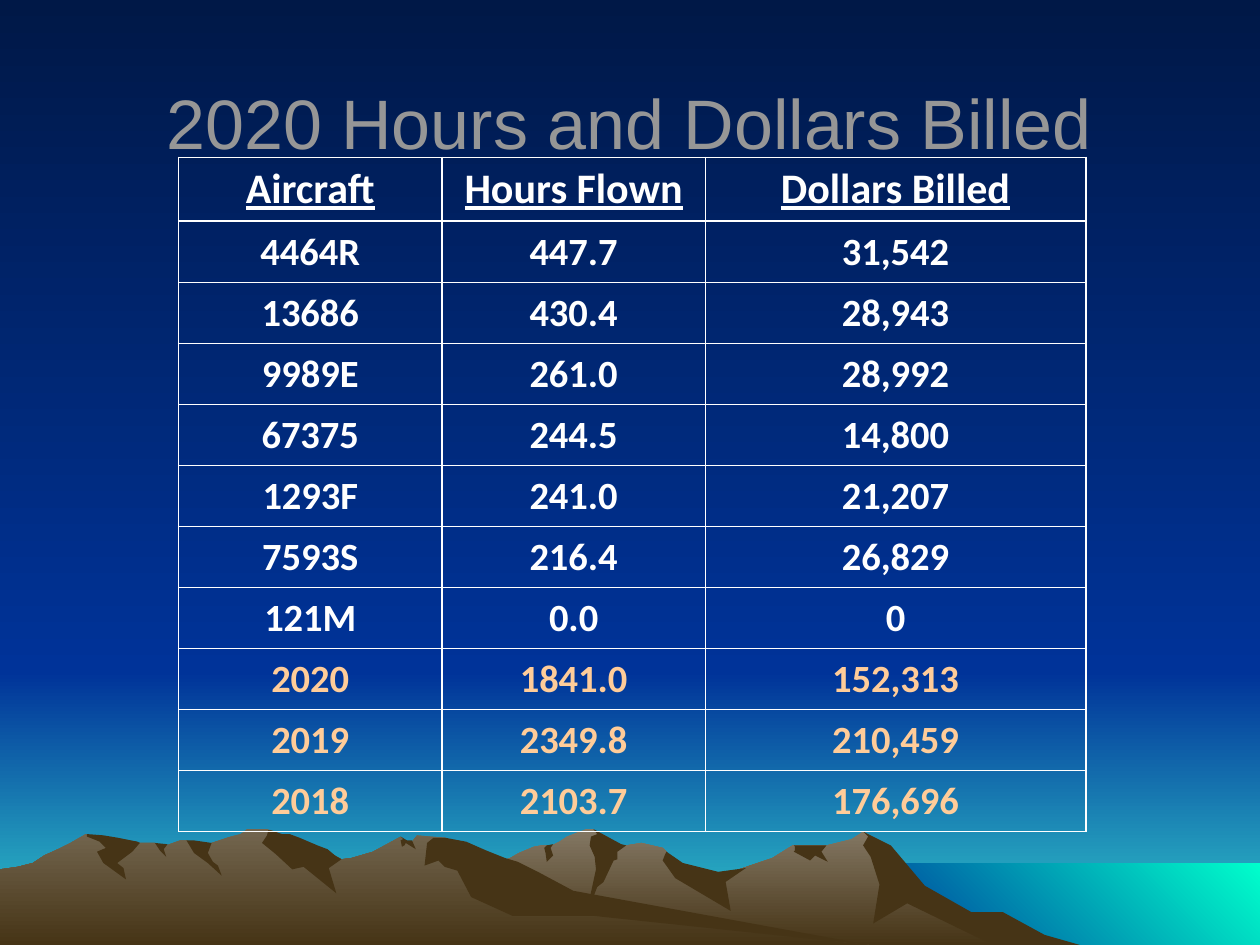
from dataclasses import dataclass

from lxml.etree import SubElement
from pptx import Presentation
from pptx.dml.color import RGBColor
from pptx.enum.text import MSO_ANCHOR, PP_ALIGN
from pptx.oxml.ns import qn
from pptx.util import Cm, Pt


@dataclass(frozen=True)
class Theme:
    heading_font: str = "Arial"
    table_font: str = "Calibri"
    title_size: int = 40
    header_size: int = 24
    body_size: int = 22
    title: str = "969696"
    text: str = "FFFFFF"
    total: str = "FFCC99"
    night: str = "001847"
    blue: str = "003399"
    horizon: str = "33CCCC"
    sea: str = "00FFCC"
    rock: str = "463416"
    far_rock: str = "847864"
    near_rock: str = "73664F"


THEME = Theme()
OUTLINE_UNIT = Cm(0.0254)  # outlines are in hundredths of an inch

TITLE = "2020 Hours and Dollars Billed"
HEADER = ("Aircraft", "Hours Flown", "Dollars Billed")
AIRCRAFT = [
    ("4464R", "447.7", "31,542"),
    ("13686", "430.4", "28,943"),
    ("9989E", "261.0", "28,992"),
    ("67375", "244.5", "14,800"),
    ("1293F", "241.0", "21,207"),
    ("7593S", "216.4", "26,829"),
    ("121M", "0.0", "0"),
]
YEARS = [
    ("2020", "1841.0", "152,313"),
    ("2019", "2349.8", "210,459"),
    ("2018", "2103.7", "176,696"),
]

FAR_RANGE = [
    (802, 740), (778, 727), (764, 723), (723, 698), (702, 671), (685, 660), (676, 666),
    (656, 671), (629, 671), (613, 681), (566, 697), (536, 690), (529, 676), (526, 673),
    (509, 669), (497, 671), (486, 673), (474, 661), (471, 658), (465, 658), (450, 664),
    (444, 668), (438, 671), (430, 671), (424, 672), (412, 677), (405, 681), (394, 685),
    (355, 698), (327, 709), (277, 739), (258, 750), (820, 750)]
FAR_SHADOWS = [
    [(796, 724), (771, 724), (734, 703), (707, 671), (685, 660), (689, 664), (685, 671),
     (691, 680), (698, 702), (693, 733), (720, 717), (788, 750), (857, 750), (829, 742)],
    [(471, 658), (474, 662), (469, 664), (468, 671), (472, 680), (473, 690), (465, 727),
     (474, 704), (479, 700), (487, 683), (490, 682), (490, 676), (497, 671), (493, 670)],
    [(529, 676), (528, 678), (526, 683), (536, 697), (580, 723), (576, 700), (592, 689),
     (570, 692), (542, 685)],
    [(650, 671), (630, 671), (631, 672), (631, 675), (630, 676), (643, 683), (647, 679),
     (657, 684), (652, 676), (656, 671)],
    [(433, 677), (432, 673), (434, 671), (439, 670), (437, 673), (439, 679), (434, 684)],
]
NEAR_RANGE = [
    (690, 750), (667, 748), (432, 712), (354, 665), (331, 663), (327, 668), (323, 668),
    (318, 664), (296, 676), (279, 681), (271, 682), (260, 676), (236, 681), (223, 663),
    (219, 660), (212, 658), (196, 658), (191, 662), (183, 664), (168, 669), (160, 671),
    (148, 667), (143, 667), (132, 671), (128, 671), (123, 669), (111, 669), (94, 671),
    (68, 662), (56, 669), (46, 674), (35, 679), (26, 685), (14, 688), (0, 690), (0, 750)]
NEAR_SHADOWS = [
    [(212, 663), (208, 669), (219, 678), (232, 690), (241, 688), (267, 709), (261, 689),
     (271, 682), (266, 679), (260, 674), (252, 671), (238, 665), (230, 662), (224, 662),
     (215, 659), (213, 659)],
    [(370, 668), (354, 665), (344, 665), (339, 669), (337, 687), (348, 683), (353, 688),
     (363, 691), (374, 712), (407, 727), (472, 727), (690, 750), (455, 707), (427, 692),
     (411, 684), (401, 681), (386, 675)],
    [(318, 667), (320, 666), (318, 664), (323, 667), (327, 667), (330, 674), (322, 669),
     (321, 671), (319, 672)],
    [(154, 667), (161, 668), (168, 669), (165, 677), (169, 684), (173, 687), (176, 695),
     (165, 685), (154, 677), (148, 667)],
    [(133, 670), (130, 674), (132, 680), (127, 675), (123, 669)],
    [(109, 668), (111, 669), (105, 676), (93, 685), (98, 689), (100, 698), (82, 685),
     (77, 676), (84, 673), (79, 668), (69, 664), (69, 662), (82, 663), (94, 665)],
]


def color(value):
    return RGBColor.from_string(value)


def set_gradient(fill, start, end, angle=270):
    fill.gradient()
    fill.gradient_angle = angle
    for stop, value in zip(fill.gradient_stops, (start, end)):
        stop.color.rgb = color(value)


def add_outline(slide, points, start, end=None, angle=270):
    """Add a closed shape with a plain fill, or a gradient when end is given."""
    builder = slide.shapes.build_freeform(*points[0], scale=OUTLINE_UNIT)
    builder.add_line_segments(points[1:], close=True)
    shape = builder.convert_to_shape()
    shape.shadow.inherit = False
    shape.line.fill.background()
    if end:
        set_gradient(shape.fill, start, end, angle)
    else:
        shape.fill.solid()
        shape.fill.fore_color.rgb = color(start)


def box(left, top, right, bottom):
    return [(left, top), (right, top), (right, bottom), (left, bottom)]


def add_landscape(slide):
    set_gradient(slide.background.fill, THEME.night, THEME.blue)
    # Sky, horizon and sea
    add_outline(slide, box(0, 533, 1000, 750), THEME.blue, THEME.horizon)
    add_outline(slide, box(0, 0, 1000, 533), THEME.night, THEME.blue)
    add_outline(slide, box(683, 685, 1000, 750), THEME.blue, THEME.sea, angle=45)
    # Mountain ranges with their shaded slopes
    for outline, top_color, shadows in (
        (FAR_RANGE, THEME.far_rock, FAR_SHADOWS),
        (NEAR_RANGE, THEME.near_rock, NEAR_SHADOWS),
    ):
        add_outline(slide, outline, top_color, THEME.rock)
        for shadow in shadows:
            add_outline(slide, shadow, THEME.rock)


def format_text(paragraph, font_name, size, value):
    paragraph.alignment = PP_ALIGN.CENTER
    font = paragraph.runs[0].font
    font.name = font_name
    font.size = Pt(size)
    font.color.rgb = color(value)
    return font


def add_title(slide):
    title = slide.shapes.title
    title.left, title.top, title.width, title.height = Cm(2.18), Cm(1.47), Cm(21), Cm(1.8)
    frame = title.text_frame
    frame.text = TITLE
    frame.word_wrap = False
    frame.vertical_anchor = MSO_ANCHOR.TOP
    frame.margin_top, frame.margin_bottom = Cm(0.14), Cm(0)
    format_text(frame.paragraphs[0], THEME.heading_font, THEME.title_size, THEME.title)
    slide.shapes.element.append(title.element)  # in front of the landscape


def add_borders(cell):
    properties = cell._tc.get_or_add_tcPr()
    for index, side in enumerate(("a:lnL", "a:lnR", "a:lnT", "a:lnB")):
        line = SubElement(properties, qn(side), w=str(Pt(1)))
        properties.insert(index, line)
        fill = SubElement(line, qn("a:solidFill"))
        SubElement(fill, qn("a:srgbClr"), val=THEME.text)


def fill_cell(cell, text, size, value, underline):
    cell.text_frame.text = text
    cell.vertical_anchor = MSO_ANCHOR.BOTTOM
    cell.fill.background()
    font = format_text(cell.text_frame.paragraphs[0], THEME.table_font, size, value)
    font.bold = True
    font.underline = underline
    add_borders(cell)


def add_hours_table(slide):
    rows = [HEADER, *AIRCRAFT, *YEARS]
    frame = slide.shapes.add_table(
        len(rows), len(HEADER), Cm(3.6), Cm(3.17), Cm(18.29), Cm(13.59))
    table = frame.table
    table.first_row = table.horz_banding = False
    for column, width in zip(table.columns, (5.31, 5.31, 7.67)):
        column.width = Cm(width)
    for row_index, values in enumerate(rows):
        is_header = row_index == 0
        table.rows[row_index].height = Cm(1.29 if is_header else 1.23)
        size = THEME.header_size if is_header else THEME.body_size
        value = THEME.total if values in YEARS else THEME.text
        for column_index, text in enumerate(values):
            fill_cell(table.cell(row_index, column_index), text, size, value, is_header)


def main():
    presentation = Presentation()
    presentation.slide_width, presentation.slide_height = Cm(25.4), Cm(19.05)
    slide = presentation.slides.add_slide(presentation.slide_layouts[5])
    add_landscape(slide)
    add_title(slide)
    add_hours_table(slide)
    presentation.save("out.pptx")


if __name__ == "__main__":
    main()
